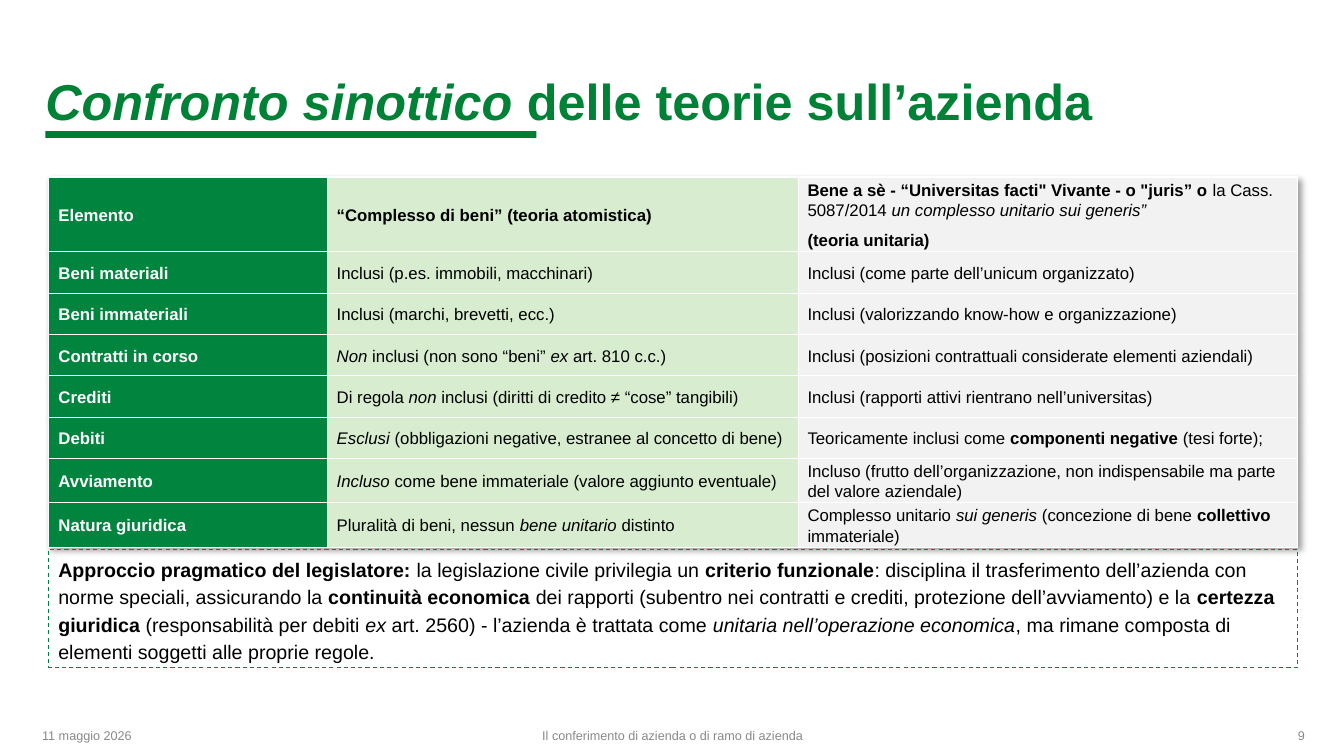
from dataclasses import dataclass

from lxml.etree import SubElement
from pptx import Presentation
from pptx.dml.color import RGBColor
from pptx.enum.dml import MSO_LINE
from pptx.enum.shapes import MSO_SHAPE
from pptx.enum.text import MSO_ANCHOR, PP_ALIGN
from pptx.oxml.ns import qn
from pptx.util import Inches, Pt

WIDTH, HEIGHT = Inches(13.33), Inches(7.5)


@dataclass(frozen=True)
class Theme:
    """Colours, font and type sizes of the slide."""
    font: str = "Arial"
    title: str = "008236"
    bar: str = "007D34"
    green: str = "00843E"
    pale: str = "D8EDCF"
    grey: str = "F2F2F2"
    white: str = "FFFFFF"
    black: str = "000000"
    muted: str = "898989"
    head: int = 36
    note: int = 14
    cell: int = 12
    foot: int = 9


THEME = Theme()

ROWS = [
    ("*Elemento*", "*“Complesso di beni” (teoria atomistica)*",
     "*Bene a sè - “Universitas facti\" Vivante - o \"juris” o *la Cass. 5087/2014 "
     "_un complesso unitario sui generis”_\n*(teoria unitaria)*"),
    ("*Beni materiali*", "Inclusi (p.es. immobili, macchinari)",
     "Inclusi (come parte dell’unicum organizzato)"),
    ("*Beni immateriali*", "Inclusi (marchi, brevetti, ecc.)",
     "Inclusi (valorizzando know-how e organizzazione)"),
    ("*Contratti in corso*", "_Non_ inclusi (non sono “beni” _ex_ art. 810 c.c.)",
     "Inclusi (posizioni contrattuali considerate elementi aziendali)"),
    ("*Crediti*", "Di regola _non_ inclusi (diritti di credito ≠ “cose” tangibili)",
     "Inclusi (rapporti attivi rientrano nell’universitas)"),
    ("*Debiti*", "_Esclusi_ (obbligazioni negative, estranee al concetto di bene)",
     "Teoricamente inclusi come *componenti negative* (tesi forte);"),
    ("*Avviamento*", "_Incluso_ come bene immateriale (valore aggiunto eventuale)",
     "Incluso (frutto dell’organizzazione, non indispensabile ma parte del valore aziendale)"),
    ("*Natura giuridica*", "Pluralità di beni, nessun _bene unitario_ distinto",
     "Complesso unitario _sui generis_ (concezione di bene *collettivo* immateriale)"),
]

NOTE = (
    "*Approccio pragmatico del legislatore:* la legislazione civile privilegia un "
    "*criterio funzionale*: disciplina il trasferimento dell’azienda con norme speciali, "
    "assicurando la *continuità economica* dei rapporti (subentro nei contratti e crediti, "
    "protezione dell’avviamento) e la *certezza giuridica* (responsabilità per debiti _ex_ "
    "art. 2560) - l’azienda è trattata come _unitaria nell’operazione economica_, ma rimane "
    "composta di elementi soggetti alle proprie regole."
)


def across(share):
    """Turn a percentage of the slide's width into a length."""
    return int(WIDTH * share / 100)


def down(share):
    """Turn a percentage of the slide's height into a length."""
    return int(HEIGHT * share / 100)


def place(left, top, width, height):
    """Turn four percentages into a position and size."""
    return across(left), down(top), across(width), down(height)


def paint(fill, color):
    """Fill with one solid colour."""
    fill.solid()
    fill.fore_color.rgb = RGBColor.from_string(color)


def add_runs(para, text):
    """Add runs, with * switching bold and _ switching italic."""
    for i, bold in enumerate(text.split("*")):
        for j, part in enumerate(bold.split("_")):
            if part:
                run = para.add_run()
                run.text = part
                if i % 2:
                    run.font.bold = True
                if j % 2:
                    run.font.italic = True


def write(frame, text, size, color, align=PP_ALIGN.LEFT, lead=1.0, after=0, indent=0):
    """Write marked text into a frame, one paragraph a line."""
    frame.word_wrap = True
    for i, line in enumerate(text.split("\n")):
        para = frame.add_paragraph() if i else frame.paragraphs[0]
        para.alignment = align
        para.line_spacing = lead
        para.space_after = Pt(after)
        if indent:
            para._p.get_or_add_pPr().set("marL", str(indent))
        para.font.name = THEME.font
        para.font.size = Pt(size)
        para.font.color.rgb = RGBColor.from_string(color)
        add_runs(para, text=line)


def add_label(slide, box, text, size, color, align=PP_ALIGN.LEFT, anchor=MSO_ANCHOR.MIDDLE):
    """Add a text box."""
    frame = slide.shapes.add_textbox(*box).text_frame
    frame.vertical_anchor = anchor
    write(frame, text, size, color, align)


def add_box(slide, box):
    """Add a rectangle without shadow."""
    shape = slide.shapes.add_shape(MSO_SHAPE.RECTANGLE, *box)
    shape.shadow.inherit = False
    return shape


def add_bar(slide, box):
    """Add the title's underline."""
    bar = add_box(slide, box)
    paint(bar.fill, THEME.bar)
    bar.line.fill.background()


def add_note(slide, box, text):
    """Add the dashed remark box."""
    note = add_box(slide, box)
    note.fill.background()
    paint(note.line.fill, THEME.green)
    note.line.width = Pt(0.75)
    note.line.dash_style = MSO_LINE.DASH
    note.text_frame.vertical_anchor = MSO_ANCHOR.TOP
    write(note.text_frame, text, THEME.note, THEME.black, lead=1.16, after=8)


def add_edges(cell):
    """Give a cell thin white borders."""
    props = cell._tc.get_or_add_tcPr()
    for side in "LRTB":
        edge = SubElement(props, qn(f"a:ln{side}"), w=str(Pt(1)))
        solid = SubElement(edge, qn("a:solidFill"))
        SubElement(solid, qn("a:srgbClr"), val=THEME.white)


def add_shade(table):
    """Give the table a soft shadow."""
    effects = SubElement(table._tbl.tblPr, qn("a:effectLst"))
    table._tbl.tblPr.insert(0, effects)
    outer = SubElement(effects, qn("a:outerShdw"), blurRad=str(Pt(4)),
                       dist=str(Pt(3)), dir="2700000", algn="tl", rotWithShape="0")
    color = SubElement(outer, qn("a:srgbClr"), val=THEME.black)
    SubElement(color, qn("a:alpha"), val="40000")


def fill_cell(cell, text, first, back):
    """Style and write one cell."""
    add_edges(cell)
    paint(cell.fill, back)
    cell.vertical_anchor = MSO_ANCHOR.MIDDLE
    if not first:
        cell.margin_left = cell.margin_right = cell.margin_top = cell.margin_bottom = 0
    write(cell.text_frame, text, THEME.cell, THEME.white if first else THEME.black,
          lead=1.1, after=6, indent=0 if first else Inches(0.09))


def add_grid(slide, box, rows, widths, heights):
    """Add the comparison table."""
    table = slide.shapes.add_table(len(rows), len(widths), *box).table
    table.first_row = table.horz_banding = False
    add_shade(table)
    for col, width in zip(table.columns, widths):
        col.width = across(width)
    for row, height in zip(table.rows, heights):
        row.height = down(height)
    backs = THEME.green, THEME.pale, THEME.grey
    for r, texts in enumerate(rows):
        for c, text in enumerate(texts):
            fill_cell(table.cell(r, c), text, c == 0, backs[c])


def main():
    """Build and save the slide."""
    deck = Presentation()
    deck.slide_width, deck.slide_height = WIDTH, HEIGHT
    slide = deck.slides.add_slide(deck.slide_layouts[6])
    add_bar(slide, place(3.38, 17.33, 36.53, 0.93))
    add_label(slide, place(2.63, 4.53, 96.4, 13.47),
              "*_Confronto sinottico_ delle teorie sull’azienda*",
              THEME.head, THEME.title, anchor=MSO_ANCHOR.BOTTOM)
    add_grid(slide, place(3.6, 23.4, 92.95, 47.76), ROWS,
             (20.78, 35.03, 37.14), [9.47] + [5.47] * (len(ROWS) - 1))
    feet = (
        (2.4, 22.5, "11 maggio 2026", PP_ALIGN.LEFT),
        (33.16, 33.76, "Il conferimento di azienda o di ramo di azienda", PP_ALIGN.CENTER),
        (75.32, 22.5, "9", PP_ALIGN.RIGHT),
    )
    for left, width, text, align in feet:
        add_label(slide, place(left, 94.67, width, 5.33), text, THEME.foot, THEME.muted, align)
    add_note(slide, place(3.6, 72.67, 92.95, 15.6), NOTE)
    deck.save("out.pptx")


if __name__ == "__main__":
    main()
